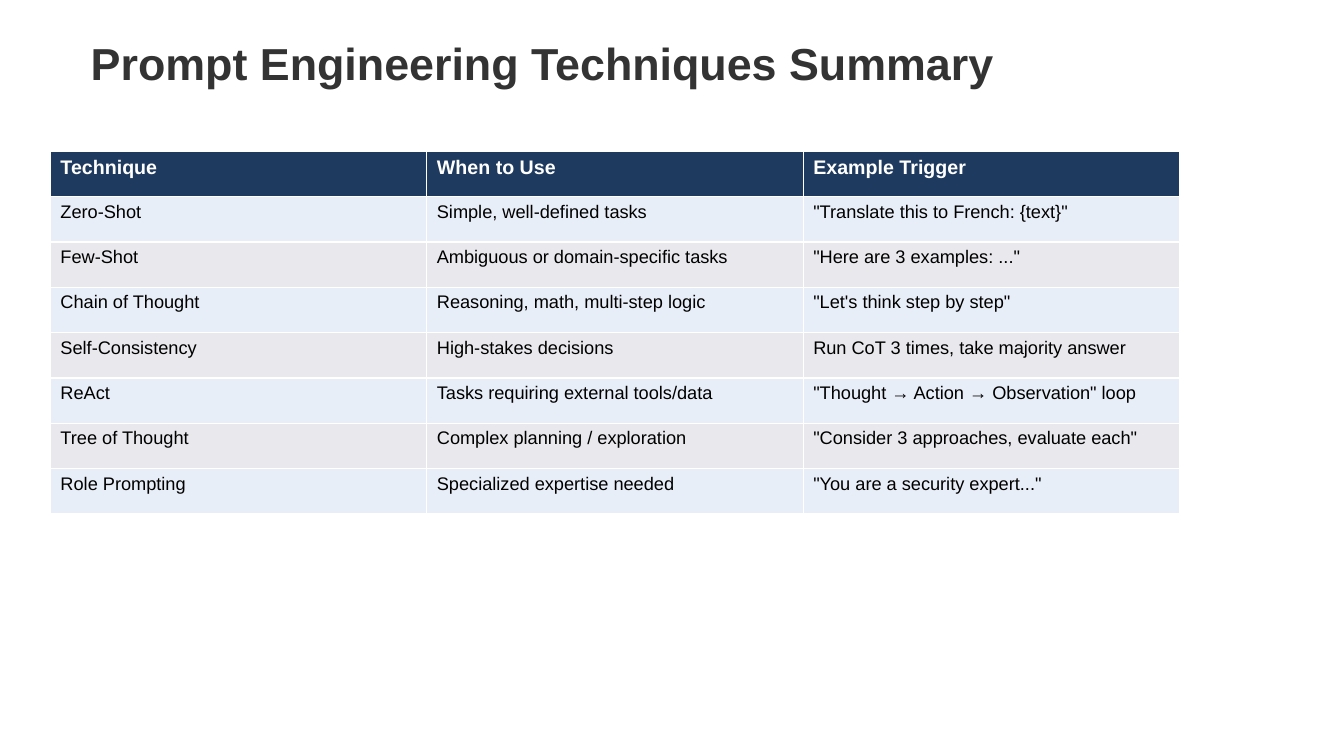
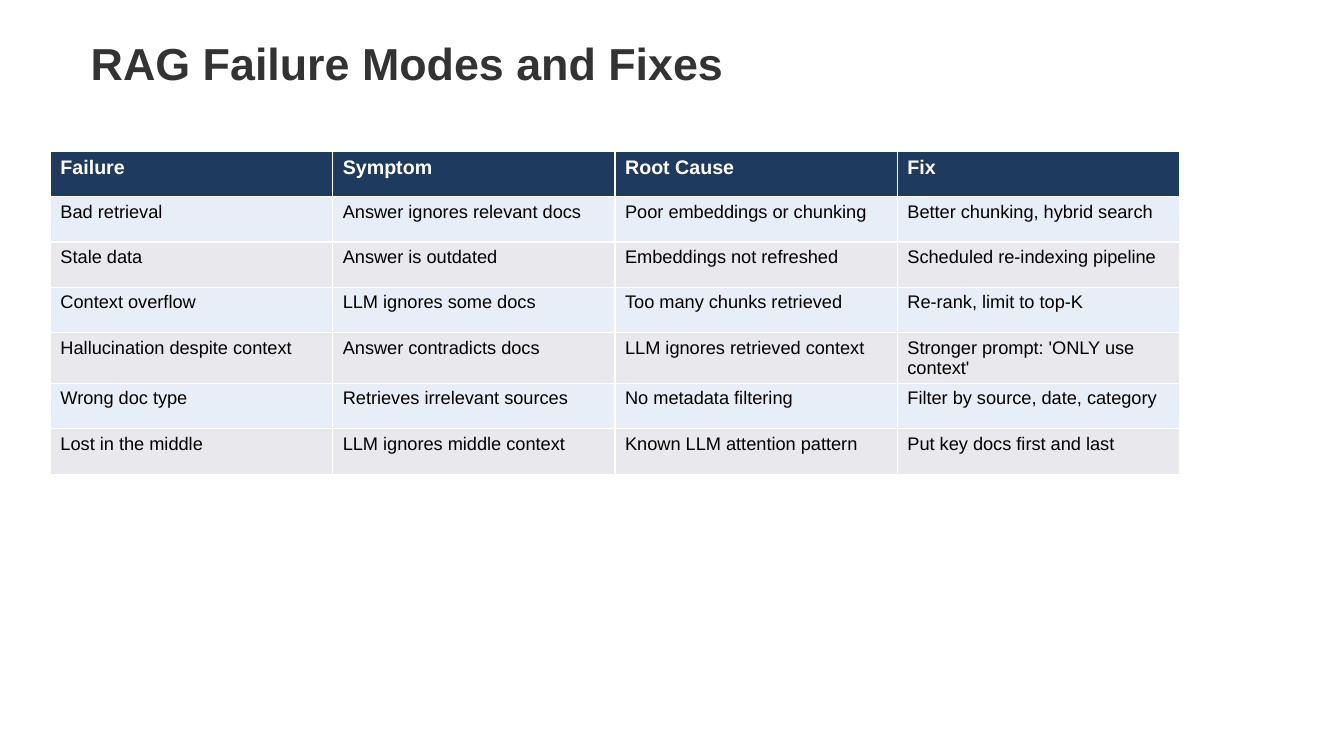
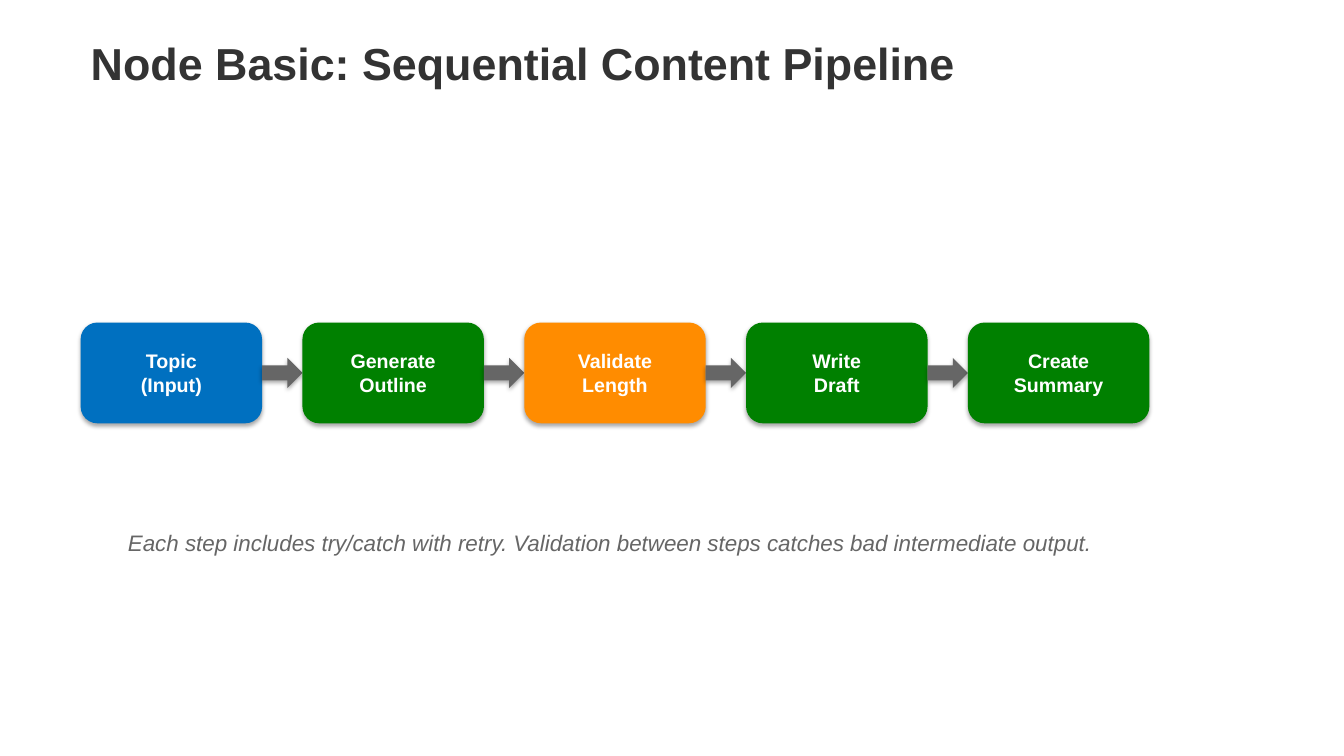
"""Build a three-slide deck on prompting, retrieval failures and a content pipeline."""

import dataclasses
import typing

import pptx
import pptx.dml.color
import pptx.enum.shapes
import pptx.enum.text
import pptx.presentation
import pptx.shapes.autoshape
import pptx.slide
import pptx.text.text
import pptx.util

Inches = pptx.util.Inches
Pt = pptx.util.Pt
RGBColor = pptx.dml.color.RGBColor
Shape = pptx.enum.shapes.MSO_SHAPE
Align = pptx.enum.text.PP_ALIGN
Anchor = pptx.enum.text.MSO_ANCHOR

WHITE = RGBColor(0xFF, 0xFF, 0xFF)
BLACK = RGBColor(0x00, 0x00, 0x00)
CHARCOAL = RGBColor(0x33, 0x33, 0x33)
GREY = RGBColor(0x66, 0x66, 0x66)
NAVY = RGBColor(0x1F, 0x3A, 0x5F)
PALE_BLUE = RGBColor(0xE8, 0xEE, 0xF7)
PALE_GREY = RGBColor(0xE8, 0xE8, 0xED)
BLUE = RGBColor(0x00, 0x70, 0xC0)
GREEN = RGBColor(0x00, 0x80, 0x00)
ORANGE = RGBColor(0xFF, 0x8C, 0x00)


@dataclasses.dataclass(frozen=True)
class TextStyle:
    """Font attributes, colour and alignment of a text."""

    font: dict[str, typing.Any]
    color: RGBColor
    align: Align = Align.LEFT


@dataclasses.dataclass(frozen=True)
class TablePage:
    """A titled table whose first row is the header."""

    title: str
    rows: list[tuple[str, ...]]


@dataclasses.dataclass(frozen=True)
class Step:
    """One box of the pipeline."""

    label: str
    color: RGBColor


FONT = "Arial"
TITLE = TextStyle({"name": FONT, "size": Pt(32), "bold": True}, CHARCOAL)
HEADER = TextStyle({"name": FONT, "size": Pt(14), "bold": True}, WHITE)
BODY = TextStyle({"name": FONT, "size": Pt(13), "bold": False}, BLACK)
STEP = TextStyle(HEADER.font, WHITE, Align.CENTER)
CAPTION = TextStyle({"name": FONT, "size": Pt(16), "italic": True}, GREY, Align.CENTER)

MARGIN = Inches(0.8)
TEXT_WIDTH = Inches(10.5)
TABLE_LEFT, TABLE_TOP, TABLE_WIDTH = Inches(0.5), Inches(1.5), Inches(11.2)
ROW_HEIGHT = Inches(0.45)
STEP_TOP, STEP_WIDTH, STEP_HEIGHT = Inches(3.2), Inches(1.8), Inches(1)
ARROW_WIDTH, ARROW_HEIGHT = Inches(0.4), Inches(0.3)

TABLE_PAGES = [
    TablePage("Prompt Engineering Techniques Summary", [
        ("Technique", "When to Use", "Example Trigger"),
        ("Zero-Shot", "Simple, well-defined tasks", '"Translate this to French: {text}"'),
        ("Few-Shot", "Ambiguous or domain-specific tasks", '"Here are 3 examples: ..."'),
        ("Chain of Thought", "Reasoning, math, multi-step logic", '"Let\'s think step by step"'),
        ("Self-Consistency", "High-stakes decisions", "Run CoT 3 times, take majority answer"),
        ("ReAct", "Tasks requiring external tools/data", '"Thought → Action → Observation" loop'),
        ("Tree of Thought", "Complex planning / exploration", '"Consider 3 approaches, evaluate each"'),
        ("Role Prompting", "Specialized expertise needed", '"You are a security expert..."'),
    ]),
    TablePage("RAG Failure Modes and Fixes", [
        ("Failure", "Symptom", "Root Cause", "Fix"),
        ("Bad retrieval", "Answer ignores relevant docs", "Poor embeddings or chunking",
         "Better chunking, hybrid search"),
        ("Stale data", "Answer is outdated", "Embeddings not refreshed", "Scheduled re-indexing pipeline"),
        ("Context overflow", "LLM ignores some docs", "Too many chunks retrieved", "Re-rank, limit to top-K"),
        ("Hallucination despite context", "Answer contradicts docs", "LLM ignores retrieved context",
         "Stronger prompt: 'ONLY use context'"),
        ("Wrong doc type", "Retrieves irrelevant sources", "No metadata filtering",
         "Filter by source, date, category"),
        ("Lost in the middle", "LLM ignores middle context", "Known LLM attention pattern",
         "Put key docs first and last"),
    ]),
]

STEPS = [
    Step("Topic\n(Input)", BLUE),
    Step("Generate\nOutline", GREEN),
    Step("Validate\nLength", ORANGE),
    Step("Write\nDraft", GREEN),
    Step("Create\nSummary", GREEN),
]


def write(frame: pptx.text.text.TextFrame, text: str, style: TextStyle) -> None:
    """Put one styled paragraph into a text frame."""
    para = frame.paragraphs[0]
    para.text = text
    para.alignment = style.align
    for span in para.runs:
        for name, value in style.font.items():
            setattr(span.font, name, value)
        span.font.color.rgb = style.color


def add_page(deck: pptx.presentation.Presentation, title: str) -> pptx.slide.Slide:
    """Add a title-only slide with the shared title style."""
    page = deck.slides.add_slide(deck.slide_layouts.get_by_name("Title Only"))
    box = page.shapes.title
    place = {"left": MARGIN, "top": Inches(0.3), "width": TEXT_WIDTH, "height": Inches(0.9)}
    for name, value in place.items():
        setattr(box, name, value)
    layout = {"word_wrap": True, "vertical_anchor": Anchor.TOP,
              "auto_size": pptx.enum.text.MSO_AUTO_SIZE.NONE}
    for name, value in layout.items():
        setattr(box.text_frame, name, value)
    write(box.text_frame, title, TITLE)
    return page


def add_table_page(deck: pptx.presentation.Presentation, content: TablePage) -> None:
    """Add a slide holding a table with a header and banded rows."""
    page = add_page(deck, content.title)
    row_count, column_count = len(content.rows), len(content.rows[0])
    table = page.shapes.add_table(row_count, column_count, TABLE_LEFT, TABLE_TOP,
                                  TABLE_WIDTH, ROW_HEIGHT * row_count).table
    for row_index, texts in enumerate(content.rows):
        band = PALE_BLUE if row_index % 2 else PALE_GREY
        color, style = (band, BODY) if row_index else (NAVY, HEADER)
        for column_index, text in enumerate(texts):
            cell = table.cell(row_index, column_index)
            cell.fill.solid()
            cell.fill.fore_color.rgb = color
            write(cell.text_frame, text, style)


def add_block(page: pptx.slide.Slide, kind: Shape, left: int, width: int, height: int,
              color: RGBColor) -> pptx.shapes.autoshape.Shape:
    """Add a filled shape, centred on the pipeline axis, with the theme shadow."""
    top = STEP_TOP + (STEP_HEIGHT - height) // 2
    block = page.shapes.add_shape(kind, left, top, width, height)
    block.fill.solid()
    block.fill.fore_color.rgb = color
    block.line.fill.background()
    return block


def add_pipeline_page(deck: pptx.presentation.Presentation) -> None:
    """Add the slide with the chain of steps and its caption."""
    page = add_page(deck, "Node Basic: Sequential Content Pipeline")
    for index, step in enumerate(STEPS):
        left = MARGIN + index * (STEP_WIDTH + ARROW_WIDTH)
        if index:
            add_block(page, Shape.RIGHT_ARROW, left - ARROW_WIDTH, ARROW_WIDTH, ARROW_HEIGHT, GREY)
        box = add_block(page, Shape.ROUNDED_RECTANGLE, left, STEP_WIDTH, STEP_HEIGHT, step.color)
        box.text_frame.vertical_anchor = Anchor.MIDDLE
        write(box.text_frame, step.label, STEP)
    caption = page.shapes.add_textbox(MARGIN, Inches(5.2), TEXT_WIDTH, Inches(1.2))
    caption.text_frame.word_wrap = True
    write(caption.text_frame,
          "Each step includes try/catch with retry. "
          "Validation between steps catches bad intermediate output.", CAPTION)


def main() -> None:
    """Build and save the deck."""
    deck = pptx.Presentation()
    deck.slide_width, deck.slide_height = Inches(13.33), Inches(7.5)
    for content in TABLE_PAGES:
        add_table_page(deck, content)
    add_pipeline_page(deck)
    deck.save("out.pptx")


if __name__ == "__main__":
    main()
